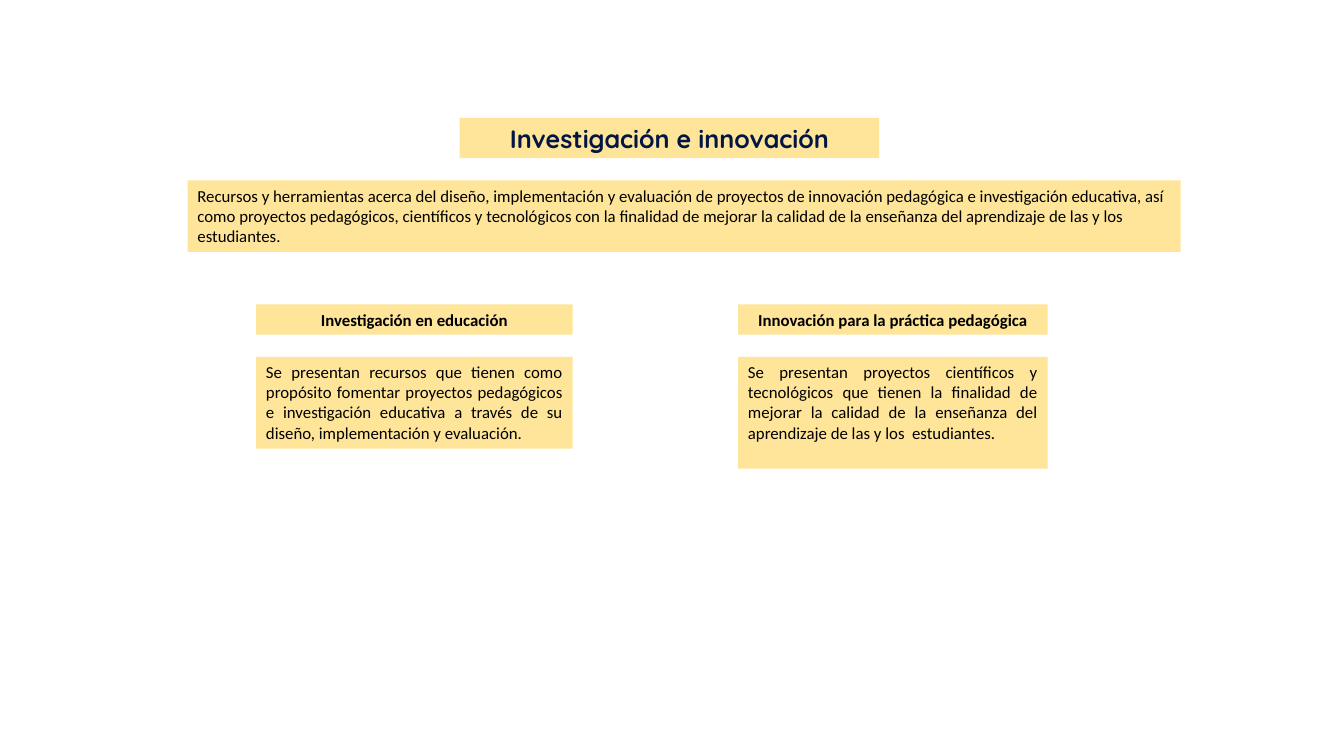
from dataclasses import dataclass

from pptx import Presentation
from pptx.dml.color import RGBColor
from pptx.enum.shapes import MSO_SHAPE
from pptx.enum.text import MSO_ANCHOR, PP_ALIGN
from pptx.slide import Slide
from pptx.util import Pt

EMU_PER_PX = 9144
CREAM = "FEE599"
NAVY = "011643"
BLACK = "000000"
HEADING_TOP = 302
HEADING_HEIGHT = 30
DETAIL_TOP = 354


@dataclass(frozen=True)
class TextBlock:
    text: str
    left: int
    top: int
    width: int
    height: int
    alignment: PP_ALIGN = PP_ALIGN.LEFT
    bold: bool = False
    font: str = "Calibri"
    size: int = 12
    color: str = BLACK


@dataclass(frozen=True)
class Topic:
    heading: str
    detail: str
    left: int
    width: int
    detail_height: int


TITLE = TextBlock(
    "Investigación e innovación", 456, 117, 416, 40,
    PP_ALIGN.CENTER, True, "Quicksand", 18, NAVY,
)
SUMMARY = TextBlock(
    "Recursos y herramientas acerca del diseño, implementación y evaluación de "
    "proyectos de innovación pedagógica e investigación educativa, así como "
    "proyectos pedagógicos, científicos y tecnológicos con la finalidad de mejorar "
    "la calidad de la enseñanza del aprendizaje de las y los estudiantes.",
    186, 179, 985, 71,
)
TOPICS = [
    Topic(
        "Investigación en educación",
        "Se presentan recursos que tienen como propósito fomentar proyectos "
        "pedagógicos e investigación educativa a través de su diseño, "
        "implementación y evaluación.",
        254, 314, 91,
    ),
    Topic(
        "Innovación para la práctica pedagógica",
        "Se presentan proyectos científicos y tecnológicos que tienen la finalidad "
        "de mejorar la calidad de la enseñanza del aprendizaje de las y los  "
        "estudiantes.",
        732, 307, 111,
    ),
]


def px(length: int) -> int:
    return length * EMU_PER_PX


def rgb(color: str) -> RGBColor:
    return RGBColor.from_string(color)


def draw_block(slide: Slide, block: TextBlock) -> None:
    shape = slide.shapes.add_shape(
        MSO_SHAPE.RECTANGLE,
        px(block.left), px(block.top), px(block.width), px(block.height),
    )
    shape.shadow.inherit = False
    shape.fill.solid()
    shape.fill.fore_color.rgb = rgb(CREAM)
    shape.line.fill.background()
    text_frame = shape.text_frame
    text_frame.text = block.text
    text_frame.word_wrap = True
    text_frame.vertical_anchor = MSO_ANCHOR.TOP
    text_frame.margin_left = text_frame.margin_right = px(10)
    text_frame.margin_top = text_frame.margin_bottom = px(5)
    paragraph = text_frame.paragraphs[0]
    paragraph.alignment = block.alignment
    font = paragraph.runs[0].font
    font.name = block.font
    font.size = Pt(block.size)
    font.bold = block.bold
    font.color.rgb = rgb(block.color)


def draw_topic(slide: Slide, topic: Topic) -> None:
    draw_block(slide, TextBlock(
        topic.heading, topic.left, HEADING_TOP, topic.width, HEADING_HEIGHT,
        PP_ALIGN.CENTER, True,
    ))
    draw_block(slide, TextBlock(
        topic.detail, topic.left, DETAIL_TOP, topic.width, topic.detail_height,
        PP_ALIGN.JUSTIFY,
    ))


def main() -> None:
    presentation = Presentation()
    presentation.slide_width = px(1333)
    presentation.slide_height = px(750)
    slide = presentation.slides.add_slide(presentation.slide_layouts[6])
    draw_block(slide, TITLE)
    draw_block(slide, SUMMARY)
    for topic in TOPICS:
        draw_topic(slide, topic)
    presentation.save("out.pptx")


if __name__ == "__main__":
    main()
